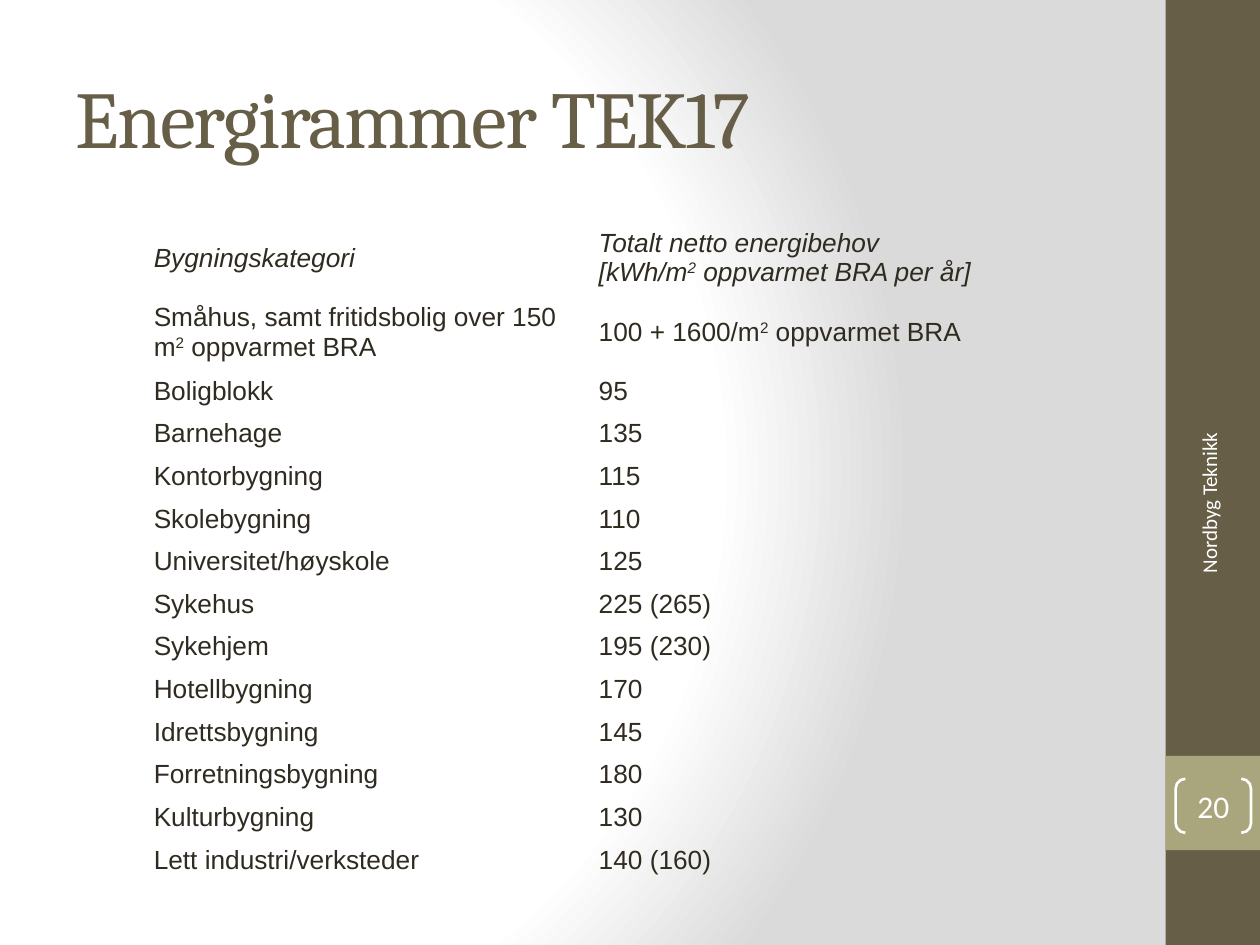
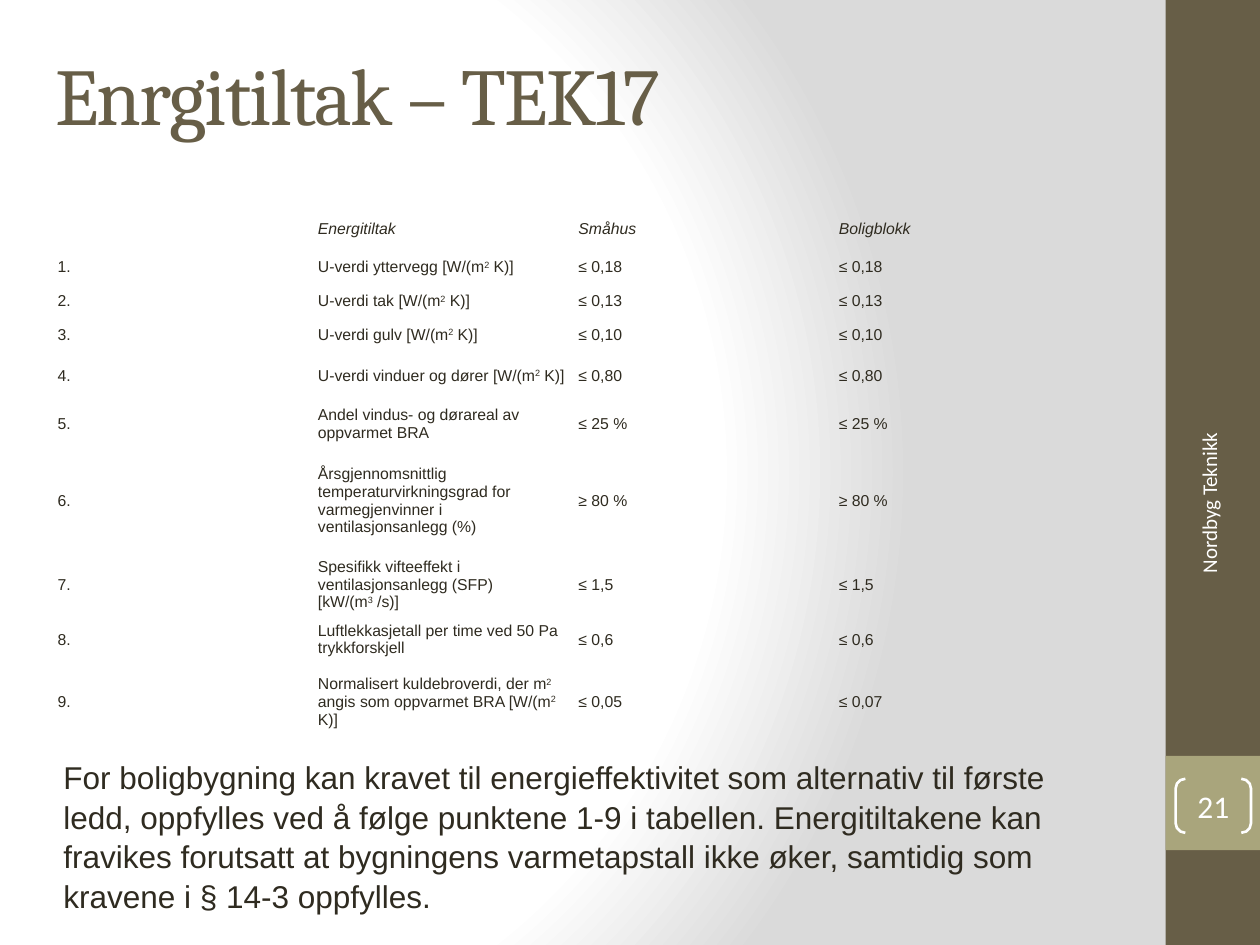
from pptx import Presentation, oxml, util as u
from pptx.dml.color import RGBColor
from pptx.enum import shapes, text
from pptx.oxml.ns import nsdecls, qn

BROWN, OLIVE, INK, WHITE = "675E47", "A9A57C", "2F2B20", "FFFFFF"
NO_STYLE_NO_GRID = "{2D5ABB26-0587-4C30-8999-92F81FD0307C}"
GRADIENT = f"""<a:gradFill {nsdecls("a")} rotWithShape="1">
  <a:gsLst>
    <a:gs pos="0"><a:srgbClr val="FFFFFF"/></a:gs>
    <a:gs pos="75000"><a:srgbClr val="FFFFFF"/></a:gs>
    <a:gs pos="100000"><a:srgbClr val="DADADA"/></a:gs>
  </a:gsLst>
  <a:path path="circle"><a:fillToRect l="20000" t="50000" r="100000" b="50000"/></a:path>
</a:gradFill>"""


def color(value):
    return RGBColor.from_string(value)


def write(frame, words, size, font="Arial", ink=INK, italic=False, align="LEFT",
          anchor="MIDDLE", tracking=None, spacing=None, inset=(0.25, 0.13)):
    frame.word_wrap = True
    frame.vertical_anchor = getattr(text.MSO_ANCHOR, anchor)
    frame.margin_left = frame.margin_right = u.Cm(inset[0])
    frame.margin_top = frame.margin_bottom = u.Cm(inset[1])
    para = frame.paragraphs[0]
    para.alignment = getattr(text.PP_ALIGN, align)
    if spacing:
        para.line_spacing = spacing
    for part, piece in enumerate(words.split("^")):
        for number, line in enumerate(piece.split("\n")):
            if number:
                para.add_line_break()
            span = para.add_run()
            span.text = line
            span.font.size = u.Pt(size)
            span.font.name = font
            span.font.italic = italic
            span.font.color.rgb = color(ink)
            if part % 2:
                span.font._element.set("baseline", "30000")
            if tracking:
                span.font._element.set("spc", str(tracking))


frames = [
    ("Bygningskategori", "Totalt netto energibehov \n[kWh/m^2^ oppvarmet BRA per år]"),
    ("Småhus, samt fritidsbolig over 150 m^2^ oppvarmet BRA", "100 + 1600/m^2^ oppvarmet BRA"),
    ("Boligblokk", "95"),
    ("Barnehage", "135"),
    ("Kontorbygning", "115"),
    ("Skolebygning", "110"),
    ("Universitet/høyskole", "125"),
    ("Sykehus", "225 (265)"),
    ("Sykehjem", "195 (230)"),
    ("Hotellbygning", "170"),
    ("Idrettsbygning", "145"),
    ("Forretningsbygning", "180"),
    ("Kulturbygning", "130"),
    ("Lett industri/verksteder", "140 (160)"),
]
measures = [
    ("U-verdi yttervegg [W/(m^2^ K)]", "≤ 0,18", "≤ 0,18"),
    ("U-verdi tak [W/(m^2^ K)]", "≤ 0,13", "≤ 0,13"),
    ("U-verdi gulv [W/(m^2^ K)]", "≤ 0,10", "≤ 0,10"),
    ("U-verdi vinduer og dører [W/(m^2^ K)]", "≤ 0,80", "≤ 0,80"),
    ("Andel vindus- og dørareal av oppvarmet BRA", "≤ 25 %", "≤ 25 %"),
    ("Årsgjennomsnittlig temperaturvirkningsgrad for varmegjenvinner i ventilasjonsanlegg (%)",
     "≥ 80 %", "≥ 80 %"),
    ("Spesifikk vifteeffekt i ventilasjonsanlegg (SFP) [kW/(m^3^ /s)]", "≤ 1,5", "≤ 1,5"),
    ("Luftlekkasjetall per time ved 50 Pa trykkforskjell", "≤ 0,6", "≤ 0,6"),
    ("Normalisert kuldebroverdi, der m^2^ angis som oppvarmet BRA [W/(m^2^ K)]",
     "≤ 0,05", "≤ 0,07"),
]
numbered = [("", "Energitiltak", "Småhus", "Boligblokk")]
numbered += [(f"{number}.", *measure) for number, measure in enumerate(measures, 1)]

pages = [
    dict(title="Energirammer TEK17", title_at=(1.27, 0.76), number="20", rows=frames,
         table_at=(2.9, 4.45), column=8.97, heights=[1.5] * 2 + [0.86] * 12,
         size=15, inset=(0.2, 0.1)),
    dict(title="Enrgitiltak – TEK17", title_at=(0.86, 0.3), number="21", rows=numbered,
         table_at=(1.03, 4.19), column=5.25,
         heights=[0.5] + [0.68] * 3 + [0.97] * 2 + [2.13, 1.24, 0.97, 1.55],
         size=9, inset=(0.13, 0.05)),
]

deck = Presentation()
deck.slide_width, deck.slide_height = u.Cm(25.4), u.Cm(19.05)

for content in pages:
    page = deck.slides.add_slide(deck.slide_layouts[6])
    page.background.fill.solid()
    solid = page._element.find(".//" + qn("a:solidFill"))
    solid.getparent().replace(solid, oxml.parse_xml(GRADIENT))

    for top, height, fill in [(0, 19.05, BROWN), (15.24, 1.9, OLIVE)]:
        band = page.shapes.add_shape(shapes.MSO_SHAPE.RECTANGLE, u.Cm(23.5), u.Cm(top),
                                     u.Cm(1.9), u.Cm(height))
        band.shadow.inherit = False
        band.fill.solid()
        band.fill.fore_color.rgb = color(fill)
        band.line.fill.background()

    left, top = content["title_at"]
    box = page.shapes.add_textbox(u.Cm(left), u.Cm(top), u.Cm(21.16), u.Cm(3.18))
    write(box.text_frame, content["title"], 46, font="Cambria", ink=BROWN, tracking=-100)

    rows, heights = content["rows"], content["heights"]
    columns = len(rows[0])
    left, top = content["table_at"]
    table = page.shapes.add_table(len(rows), columns, u.Cm(left), u.Cm(top),
                                  u.Cm(columns * content["column"]), u.Cm(sum(heights))).table
    table.first_row = table.horz_banding = False
    table._tbl.tblPr.find(qn("a:tableStyleId")).text = NO_STYLE_NO_GRID
    for column in table.columns:
        column.width = u.Cm(content["column"])
    for index, (row, height) in enumerate(zip(rows, heights)):
        table.rows[index].height = u.Cm(height)
        for place, words in enumerate(row):
            cell = table.cell(index, place)
            cell.fill.background()
            cell.vertical_anchor = text.MSO_ANCHOR.MIDDLE
            cell.margin_left = cell.margin_right = u.Cm(content["inset"][0])
            cell.margin_top = cell.margin_bottom = u.Cm(content["inset"][1])
            write(cell.text_frame, words, content["size"], italic=index == 0)

    footer = page.shapes.add_textbox(u.Cm(21.08), u.Cm(11.25), u.Cm(6.58), u.Cm(1.02))
    footer.rotation = 270
    write(footer.text_frame, "Nordbyg Teknikk", 12, font="Calibri", ink=WHITE, align="RIGHT")

    bracket = page.shapes.add_shape(shapes.MSO_SHAPE.DOUBLE_BRACKET, u.Cm(23.7), u.Cm(15.7),
                                    u.Cm(1.52), u.Cm(1.09))
    bracket.adjustments[0] = 0.18
    bracket.shadow.inherit = False
    bracket.fill.background()
    bracket.line.color.rgb = color(WHITE)
    bracket.line.width = u.Pt(1.5)
    write(bracket.text_frame, content["number"], 18, font="Calibri", ink=WHITE,
          align="CENTER", inset=(0, 0))

note = page.shapes.add_textbox(u.Cm(1.03), u.Cm(15.11), u.Cm(20.75), u.Cm(3.33))
write(note.text_frame,
      "For boligbygning kan kravet til energieffektivitet som alternativ til første ledd, "
      "oppfylles ved å følge punktene 1-9 i tabellen. Energitiltakene kan fravikes forutsatt "
      "at bygningens varmetapstall ikke øker, samtidig som kravene i § 14-3 oppfylles.",
      18, anchor="TOP", spacing=1.05)

deck.save("out.pptx")
